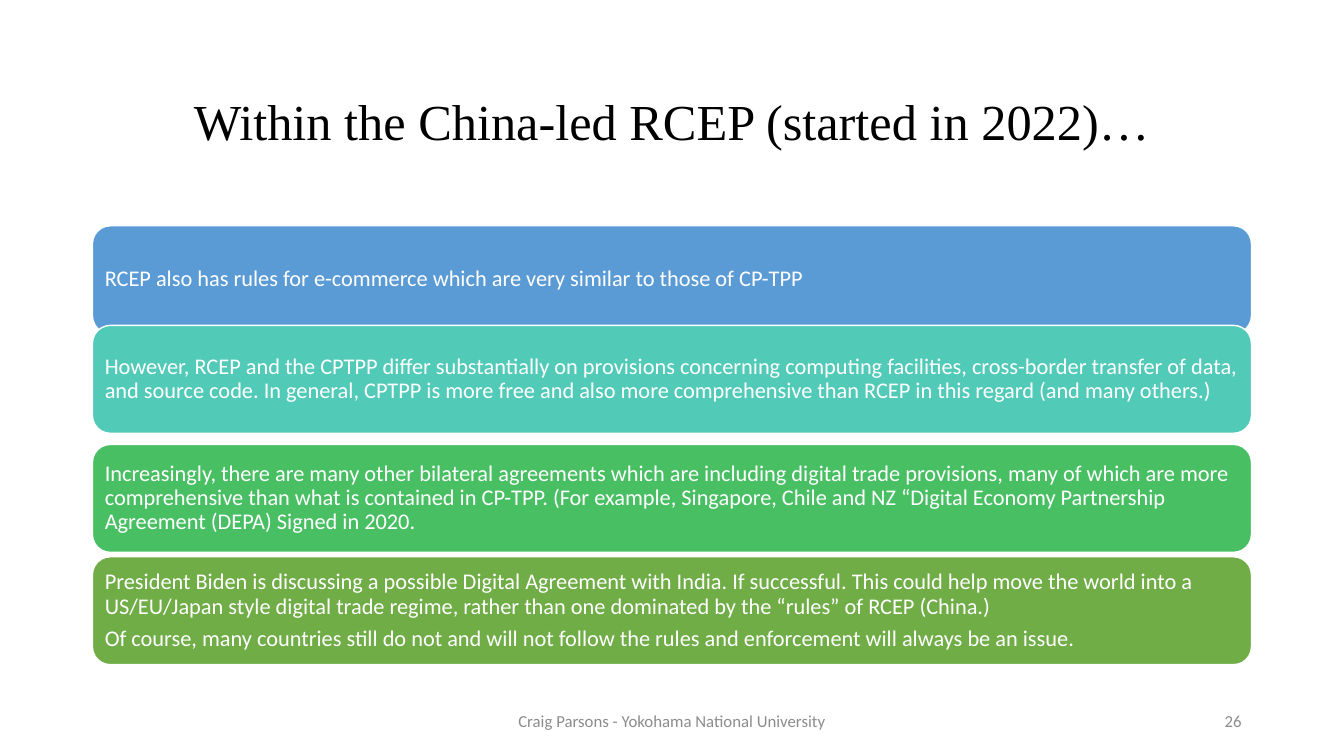
from pptx import Presentation
from pptx import util as u
from pptx.dml.color import RGBColor
from pptx.enum import shapes, text

BLACK = RGBColor(0x00, 0x00, 0x00)
WHITE = RGBColor(0xFF, 0xFF, 0xFF)
GREY = RGBColor(0x8C, 0x8C, 0x8C)
BLUE = RGBColor(0x5B, 0x9B, 0xD5)
TEAL = RGBColor(0x52, 0xCA, 0xB8)
GREEN = RGBColor(0x49, 0xBF, 0x64)
OLIVE = RGBColor(0x70, 0xAD, 0x47)

LEFT = 2.33
WIDTH = 29.21
FOOTER_TOP = 17.65
FOOTER_HEIGHT = 1.02

POINTS = [
    (5.69, BLUE, [
        "RCEP also has rules for e-commerce which are very similar to those of CP-TPP",
    ]),
    (8.2, TEAL, [
        "However, RCEP and the CPTPP differ substantially on provisions concerning "
        "computing facilities, cross-border transfer of data, and source code. In general, "
        "CPTPP is more free and also more comprehensive than RCEP in this regard "
        "(and many others.)",
    ]),
    (11.2, GREEN, [
        "Increasingly, there are many other bilateral agreements which are including "
        "digital trade provisions, many of which are more comprehensive than what is "
        "contained in CP-TPP. (For example, Singapore, Chile and NZ “Digital Economy "
        "Partnership Agreement (DEPA) Signed in 2020.",
    ]),
    (14.03, OLIVE, [
        "President Biden is discussing a possible Digital Agreement with India. If "
        "successful. This could help move the world into a US/EU/Japan style digital trade "
        "regime, rather than one dominated by the “rules” of RCEP (China.)",
        "Of course, many countries still do not and will not follow the rules and "
        "enforcement will always be an issue.",
    ]),
]


class SlideBuilder:
    body_font = "Calibri"
    title_font = "Times New Roman"
    bar_height = 2.72
    bar_margin = u.Cm(0.18)

    def __init__(self, slide):
        self.slide = slide

    def add_lines(self, shape, lines, size, color, align, font, spacing=1.0, after=0):
        frame = shape.text_frame
        frame.word_wrap = True
        frame.vertical_anchor = text.MSO_ANCHOR.MIDDLE
        for index, line in enumerate(lines):
            paragraph = frame.add_paragraph() if index else frame.paragraphs[0]
            paragraph.alignment = align
            paragraph.line_spacing = spacing
            paragraph.space_after = u.Pt(after)
            run = paragraph.add_run()
            run.text = line
            run.font.size = u.Pt(size)
            run.font.name = font
            run.font.color.rgb = color

    def text_box(self, left, top, width, height):
        return self.slide.shapes.add_textbox(
            u.Cm(left), u.Cm(top), u.Cm(width), u.Cm(height))

    def title(self, line):
        shape = self.text_box(LEFT, 1.55, WIDTH, 3.15)
        self.add_lines(shape, [line], 36, BLACK, text.PP_ALIGN.CENTER,
                       self.title_font, spacing=0.9)

    def footer(self, left, width, line, align):
        shape = self.text_box(left, FOOTER_TOP, width, FOOTER_HEIGHT)
        self.add_lines(shape, [line], 12, GREY, align, self.body_font, after=6)

    def bar(self, top, color, lines):
        shape = self.slide.shapes.add_shape(
            shapes.MSO_SHAPE.ROUNDED_RECTANGLE,
            u.Cm(LEFT), u.Cm(top), u.Cm(WIDTH), u.Cm(self.bar_height))
        shape.shadow.inherit = False
        shape.fill.solid()
        shape.fill.fore_color.rgb = color
        shape.line.color.rgb = WHITE
        shape.line.width = u.Pt(1)
        frame = shape.text_frame
        frame.margin_left = frame.margin_right = self.bar_margin
        frame.margin_top = frame.margin_bottom = self.bar_margin
        self.add_lines(shape, lines, 16, WHITE, text.PP_ALIGN.LEFT,
                       self.body_font, spacing=0.9, after=5.6)


def main():
    presentation = Presentation()
    presentation.slide_width = u.Cm(33.87)
    presentation.slide_height = u.Cm(19.05)
    builder = SlideBuilder(presentation.slides.add_slide(presentation.slide_layouts[6]))
    builder.title("Within the China-led RCEP (started in 2022)…")
    builder.footer(11.22, 11.43, "Craig Parsons - Yokohama National University",
                   text.PP_ALIGN.CENTER)
    builder.footer(23.92, 7.62, "26", text.PP_ALIGN.RIGHT)
    for top, color, lines in POINTS:
        builder.bar(top, color, lines)
    presentation.save("out.pptx")


if __name__ == "__main__":
    main()
